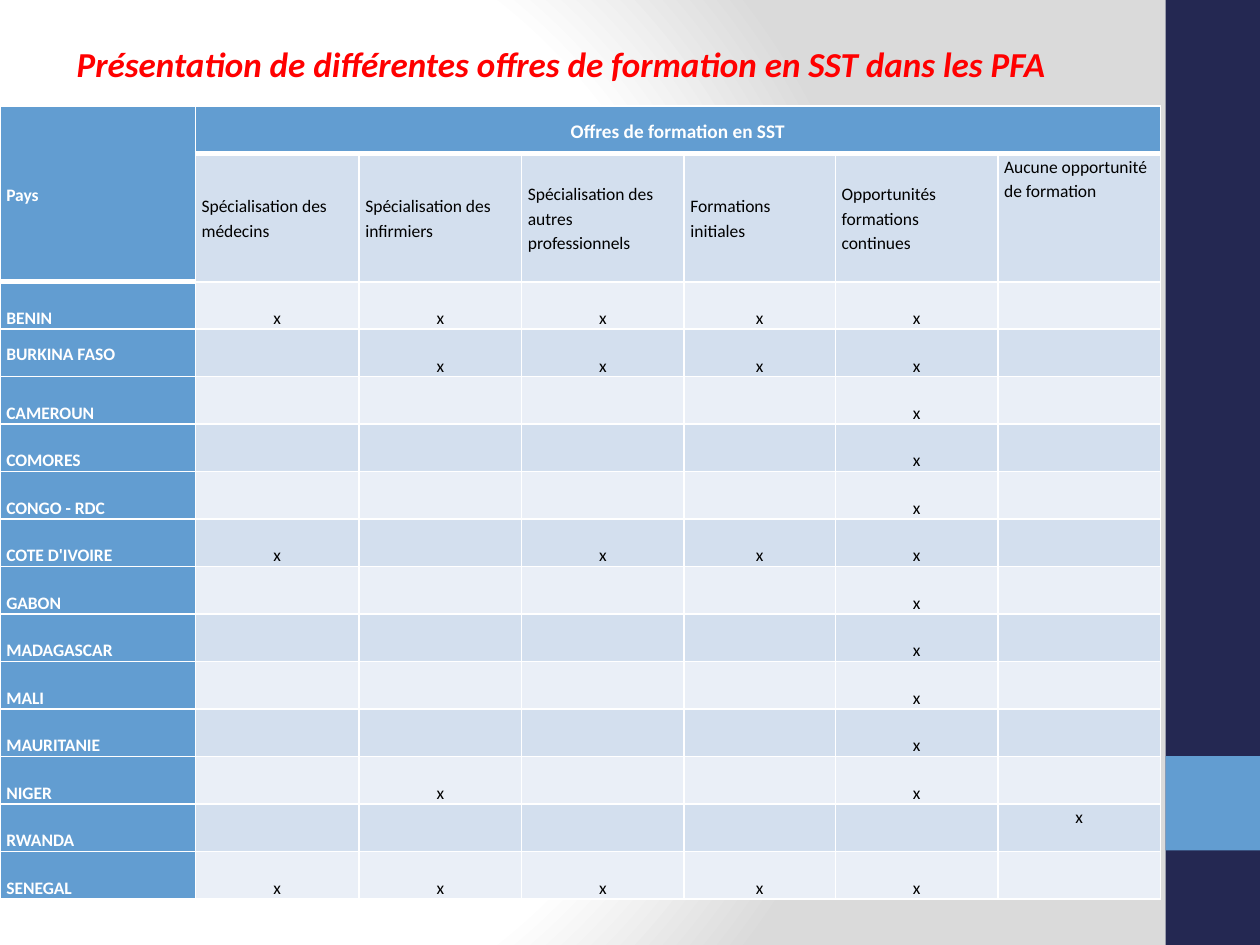
from lxml import etree
from pptx import Presentation
from pptx.dml.color import RGBColor
from pptx.enum.shapes import MSO_SHAPE as Shape
from pptx.enum.text import MSO_ANCHOR as Anchor, MSO_AUTO_SIZE as AutoSize, PP_ALIGN as Align
from pptx.oxml import parse_xml
from pptx.oxml.ns import nsdecls, qn
from pptx.util import Pt

WHITE = RGBColor(0xFF, 0xFF, 0xFF)
BLACK = RGBColor(0, 0, 0)
RED = RGBColor(0xFF, 0, 0)
GREY = RGBColor(0xDA, 0xDA, 0xDA)
NAVY = RGBColor(0x24, 0x28, 0x52)
BLUE = RGBColor(0x62, 0x9D, 0xD1)
BAND_DARK = RGBColor(0xD3, 0xDF, 0xEE)
BAND_LIGHT = RGBColor(0xEA, 0xEF, 0xF7)

COLUMN_WIDTHS = [111.6, 93.6, 92.88, 92.88, 86.4, 92.88, 92.88]
ROW_HEIGHT = 27.15
OFFERS_HEIGHT = 73.4
OFFERS = [
    "Spécialisation des médecins",
    "Spécialisation des infirmiers",
    "Spécialisation des autres professionnels",
    "Formations initiales",
    "Opportunités formations continues",
    "Aucune opportunité de formation",
]
COUNTRIES = {
    "BENIN": [1, 2, 3, 4, 5],
    "BURKINA FASO": [2, 3, 4, 5],
    "CAMEROUN": [5],
    "COMORES": [5],
    "CONGO - RDC": [5],
    "COTE D'IVOIRE": [1, 3, 4, 5],
    "GABON": [5],
    "MADAGASCAR": [5],
    "MALI": [5],
    "MAURITANIE": [5],
    "NIGER": [2, 5],
    "RWANDA": [6],
    "SENEGAL": [1, 2, 3, 4, 5],
}


def write_text(frame, text, size=10, color=BLACK, bold=False, italic=False,
               align=Align.LEFT, spacing=None):
    paragraph = frame.paragraphs[0]
    paragraph.alignment = align
    paragraph.line_spacing = spacing
    if not text:
        etree.SubElement(paragraph._p, qn("a:endParaRPr"), sz=str(size * 100))
        return
    run = paragraph.add_run()
    run.text = text
    font = run.font
    font.name, font.size, font.bold, font.italic = "Calibri", Pt(size), bold, italic
    font.color.rgb = color


def paint_background(slide):
    slide.background.fill.solid()
    solid = slide.element.find(".//" + qn("p:bgPr")).find(qn("a:solidFill"))
    stops = "".join(
        f'<a:gs pos="{position * 1000}"><a:srgbClr val="{color}"/></a:gs>'
        for position, color in [(0, WHITE), (75, WHITE), (100, GREY)])
    gradient = parse_xml(
        f'<a:gradFill {nsdecls("a")} rotWithShape="1"><a:gsLst>{stops}</a:gsLst>'
        '<a:path path="circle"><a:fillToRect l="20000" t="50000" r="100000" b="50000"/>'
        '</a:path></a:gradFill>')
    solid.getparent().replace(solid, gradient)


def add_side_band(slide, top, height, color):
    band = slide.shapes.add_shape(Shape.RECTANGLE, Pt(666), Pt(top), Pt(54), Pt(height))
    band.shadow.inherit = False
    band.fill.solid()
    band.fill.fore_color.rgb = color
    band.line.fill.background()


def add_title(slide, text):
    title = slide.shapes.add_textbox(Pt(36.72), Pt(20.88), Pt(583.92), Pt(53.28))
    title.text_frame.word_wrap = True
    title.text_frame.auto_size = AutoSize.SHAPE_TO_FIT_TEXT
    write_text(title.text_frame, text, size=20, color=RED, bold=True, italic=True)


def is_header_edge(row, column):
    return row == 0 or (row, column) == (1, 0)


def set_borders(cell, row, column):
    widths = {
        "L": 1,
        "R": 1,
        "T": 3 if is_header_edge(row - 1, column) else 1,
        "B": 3 if is_header_edge(row, column) else 1,
    }
    properties = cell._tc.get_or_add_tcPr()
    for side, width in widths.items():
        properties.append(parse_xml(
            f'<a:ln{side} {nsdecls("a")} w="{Pt(width)}"><a:solidFill>'
            f'<a:srgbClr val="{WHITE}"/></a:solidFill></a:ln{side}>'))


def fill_cell(table, row, column, text, background, anchor, **text_format):
    cell = table.cell(row, column)
    set_borders(cell, row, column)
    cell.fill.solid()
    cell.fill.fore_color.rgb = background
    cell.margin_left = cell.margin_right = Pt(3.6)
    cell.margin_top = cell.margin_bottom = 0
    cell.vertical_anchor = anchor
    write_text(cell.text_frame, text, spacing=1.15, **text_format)


def fill_headers(table):
    heading = {"color": WHITE, "bold": True}
    fill_cell(table, 0, 0, "Pays", BLUE, Anchor.MIDDLE, **heading)
    fill_cell(table, 1, 0, "", BLUE, Anchor.MIDDLE)
    fill_cell(table, 0, 1, "Offres de formation en SST", BLUE, Anchor.MIDDLE,
              size=11, align=Align.CENTER, **heading)
    for column, offer in enumerate(OFFERS, 1):
        if column > 1:
            fill_cell(table, 0, column, "", BLUE, Anchor.MIDDLE)
        anchor = Anchor.TOP if column == len(OFFERS) else Anchor.MIDDLE
        fill_cell(table, 1, column, offer, BAND_DARK, anchor)
    table.cell(0, 0).merge(table.cell(1, 0))
    table.cell(0, 1).merge(table.cell(0, len(OFFERS)))


def fill_countries(table):
    for row, (country, available) in enumerate(COUNTRIES.items(), 2):
        anchor = Anchor.MIDDLE if country == "BURKINA FASO" else Anchor.BOTTOM
        fill_cell(table, row, 0, country, BLUE, anchor, color=WHITE, bold=True)
        band = BAND_DARK if row % 2 else BAND_LIGHT
        for column in range(1, len(OFFERS) + 1):
            mark = "x" if column in available else ""
            anchor = Anchor.TOP if column == len(OFFERS) else Anchor.BOTTOM
            fill_cell(table, row, column, mark, band, anchor, align=Align.CENTER)


def add_offers_table(slide):
    heights = [ROW_HEIGHT, OFFERS_HEIGHT] + [ROW_HEIGHT] * len(COUNTRIES)
    table = slide.shapes.add_table(
        len(heights), len(COLUMN_WIDTHS), Pt(0), Pt(60.48),
        Pt(sum(COLUMN_WIDTHS)), Pt(sum(heights))).table
    table.first_row = table.horz_banding = False
    for column, width in zip(table.columns, COLUMN_WIDTHS):
        column.width = Pt(width)
    for row, height in zip(table.rows, heights):
        row.height = Pt(height)
    fill_headers(table)
    fill_countries(table)


def main():
    deck = Presentation()
    deck.slide_width, deck.slide_height = Pt(720), Pt(540)
    slide = deck.slides.add_slide(deck.slide_layouts[6])
    paint_background(slide)
    add_side_band(slide, 0, 540, NAVY)
    add_side_band(slide, 432, 54, BLUE)
    add_offers_table(slide)
    add_title(slide, "Présentation de différentes offres de formation en SST dans les PFA")
    deck.save("out.pptx")


if __name__ == "__main__":
    main()
